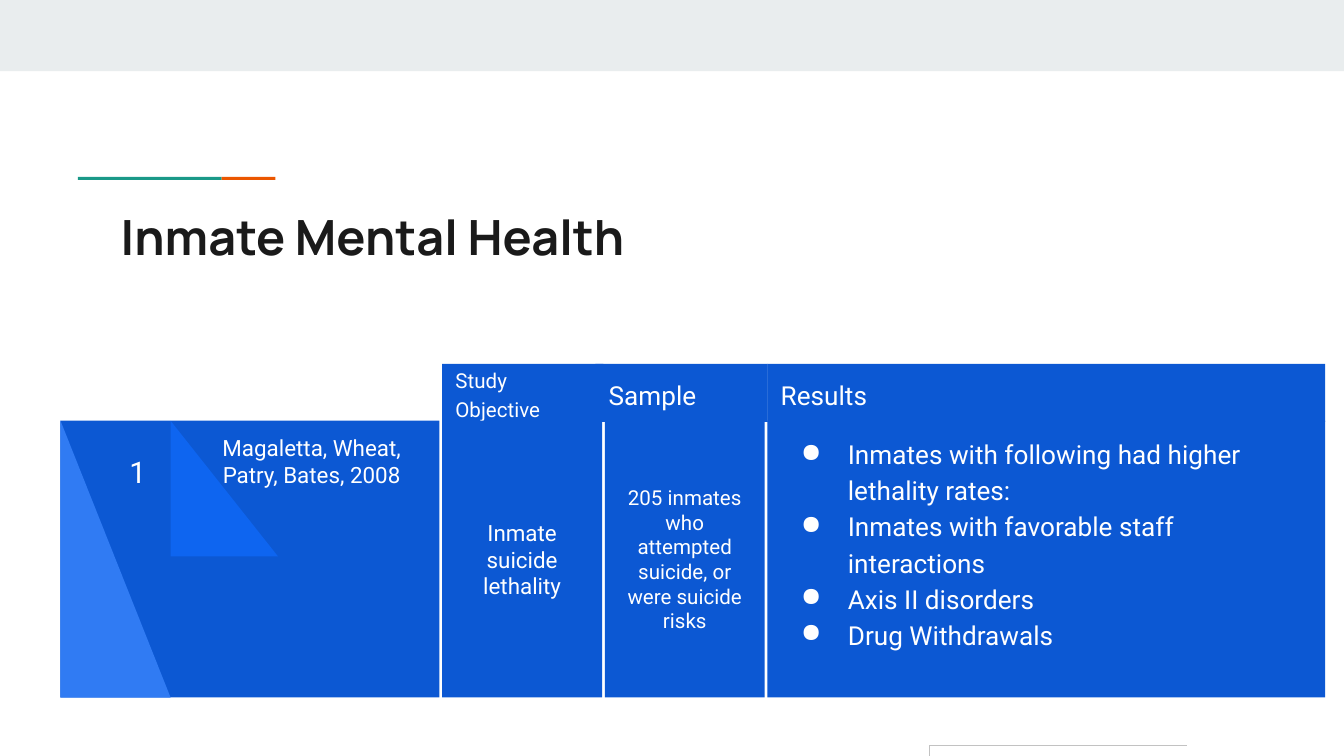
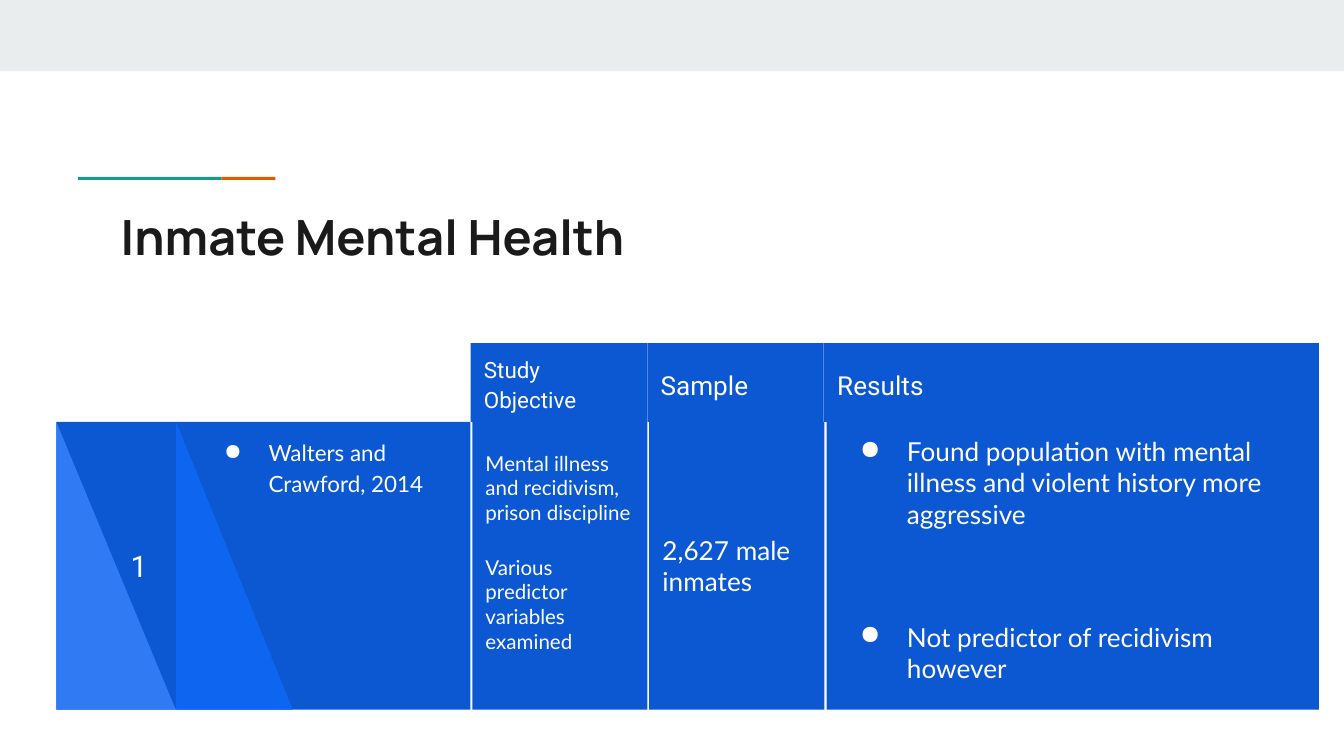
from lxml import etree
from pptx import Presentation
from pptx.dml.color import RGBColor
from pptx.enum.shapes import MSO_CONNECTOR as CONN, MSO_SHAPE as SHAPE
from pptx.enum.text import MSO_ANCHOR as ANCHOR, PP_ALIGN as ALIGN
from pptx.oxml.ns import qn
from pptx.util import Pt

BLUE, MID_BLUE, LIGHT_BLUE = "0C58D3", "0E65F0", "307BF3"
WHITE, INK, BAND, GREEN, ORANGE, GREY = "FFFFFF", "1A1A1A", "E9EDEE", "1A9988", "EB5600", "C2C2C2"
INSET = 7.2


def rgb(color):
    return RGBColor.from_string(color)


def box(slide, x, y, w, h, fill=None, texts=(), size=14, font="Roboto", color=WHITE,
        bold=False, align=ALIGN.LEFT, anchor=ANCHOR.TOP, spacing=None, gap=0,
        hang=0, bottom=INSET, shape=SHAPE.RECTANGLE):
    """Add a filled shape, or a text box when fill is None; hang is the bullet's hanging indent."""
    at = Pt(x), Pt(y), Pt(w), Pt(h)
    if fill:
        sp = slide.shapes.add_shape(shape, *at)
        sp.shadow.inherit = False
        sp.fill.solid()
        sp.fill.fore_color.rgb = rgb(fill)
        sp.line.fill.background()
    else:
        sp = slide.shapes.add_textbox(*at)
    tf = sp.text_frame
    tf.word_wrap = True
    tf.vertical_anchor = anchor
    tf.margin_left = tf.margin_right = tf.margin_top = Pt(INSET)
    tf.margin_bottom = Pt(bottom)
    for i, text in enumerate(texts):
        p = tf.add_paragraph() if i else tf.paragraphs[0]
        p.text = text
        p.alignment = align
        if spacing:
            p.line_spacing = spacing
        if i and gap:
            p.space_before = Pt(gap)
        if hang:
            pPr = p._p.get_or_add_pPr()
            pPr.set("marL", str(Pt(36)))
            pPr.set("indent", str(-Pt(hang)))
            bullet_color = etree.SubElement(pPr, qn("a:buClr"))
            etree.SubElement(bullet_color, qn("a:srgbClr")).set("val", WHITE)
            etree.SubElement(pPr, qn("a:buChar")).set("char", "●")
        for r in p.runs:
            r.font.size = Pt(size)
            r.font.name = font
            r.font.bold = bold
            r.font.color.rgb = rgb(color)
    return sp


prs = Presentation()
prs.slide_width, prs.slide_height = Pt(720), Pt(405)

# Column tuples: left, width; triangle tuples: left, width, height, colour
studies = [
    dict(
        head_top=195, head_height=31, body_top=225.4, body_height=148.3,
        heads=[(236.9, 86.4, 11), (319, 92.2, 14), (411.1, 298.8, 14)],
        bodies=[(236.9, 85.7), (324, 85.7), (411.1, 298.8)],
        panel=(32.4, 203),
        triangles=[(91.4, 57.6, 72.7, MID_BLUE), (32.4, 59, 148.3, LIGHT_BLUE)],
        number=(55.4, 36.7, 44),
        source=(97.9, 138.2, "Magaletta, Wheat, Patry, Bates, 2008",
                dict(align=ALIGN.CENTER)),
        cells=[
            (["Inmate suicide lethality"],
             dict(size=12, align=ALIGN.CENTER, anchor=ANCHOR.MIDDLE)),
            (["205 inmates who attempted suicide, or were suicide risks"],
             dict(size=11, align=ALIGN.CENTER, anchor=ANCHOR.MIDDLE)),
            (["Inmates with following had higher lethality rates:",
              "Inmates with favorable staff interactions",
              "Axis II disorders", "Drug Withdrawals"],
             dict(hang=25.2, spacing=1.15)),
        ],
    ),
    dict(
        head_top=183.8, head_height=42.2, body_top=226, body_height=154.2,
        heads=[(252.2, 94.5, 12), (346.8, 94.5, 14), (441.4, 265.2, 14)],
        bodies=[(253, 93.8), (347.8, 93.8), (442.8, 263.8)],
        panel=(30.2, 221.8),
        triangles=[(94.3, 62.6, 154.2, MID_BLUE), (30.2, 64, 154.2, LIGHT_BLUE)],
        number=(54.7, 39.6, 93.6),
        source=(100.8, 139, "Walters and Crawford, 2014",
                dict(font="Lato", hang=23.8, spacing=1.15)),
        cells=[
            (["Mental illness and recidivism, prison discipline",
              "Various predictor variables examined"],
             dict(size=11, font="Lato", anchor=ANCHOR.MIDDLE, gap=16, bottom=22)),
            (["2,627 male inmates"], dict(font="Lato", anchor=ANCHOR.MIDDLE)),
            (["Found population with mental illness and violent history more aggressive",
              "Not predictor of recidivism however"],
             dict(font="Lato", hang=25.2, gap=49)),
        ],
    ),
]

slides = []
for study in studies:
    s = prs.slides.add_slide(prs.slide_layouts[6])
    slides.append(s)
    top, height = study["body_top"], study["body_height"]

    box(s, 0, 0, 720, 38.2, BAND)
    box(s, 41.8, 94.8, 77, 1.6, GREEN)
    box(s, 118.8, 94.8, 28.8, 1.6, ORANGE)
    box(s, 57.6, 103.7, 605.5, 42.5, texts=["Inmate Mental Health"], size=26,
        font="Manrope", color=INK, bold=True)

    for (x, w, size), label in zip(study["heads"], ["Study Objective", "Sample", "Results"]):
        box(s, x, study["head_top"], w, study["head_height"], BLUE, [label], size,
            anchor=ANCHOR.MIDDLE, spacing=1.15)

    x, w = study["panel"]
    box(s, x, top, w, height, BLUE)
    for x, w, h, color in study["triangles"]:
        box(s, x, top, w, h, color, shape=SHAPE.RIGHT_TRIANGLE)
    for (x, w), (texts, style) in zip(study["bodies"], study["cells"]):
        box(s, x, top, w, height, BLUE, texts, **style)

    x, w, h = study["number"]
    box(s, x, top, w, h, texts=["1"], size=16, align=ALIGN.CENTER, anchor=ANCHOR.BOTTOM)
    x, w, text, style = study["source"]
    box(s, x, top, w, height, texts=[text], size=12, **style)

elbow = slides[0].shapes.add_connector(CONN.ELBOW, Pt(635.8), Pt(399.5), Pt(360), Pt(430.5))
elbow.line.color.rgb = rgb(GREY)
elbow.line.width = Pt(0.75)
etree.SubElement(elbow._element.spPr, qn("a:effectLst"))

prs.save("out.pptx")
